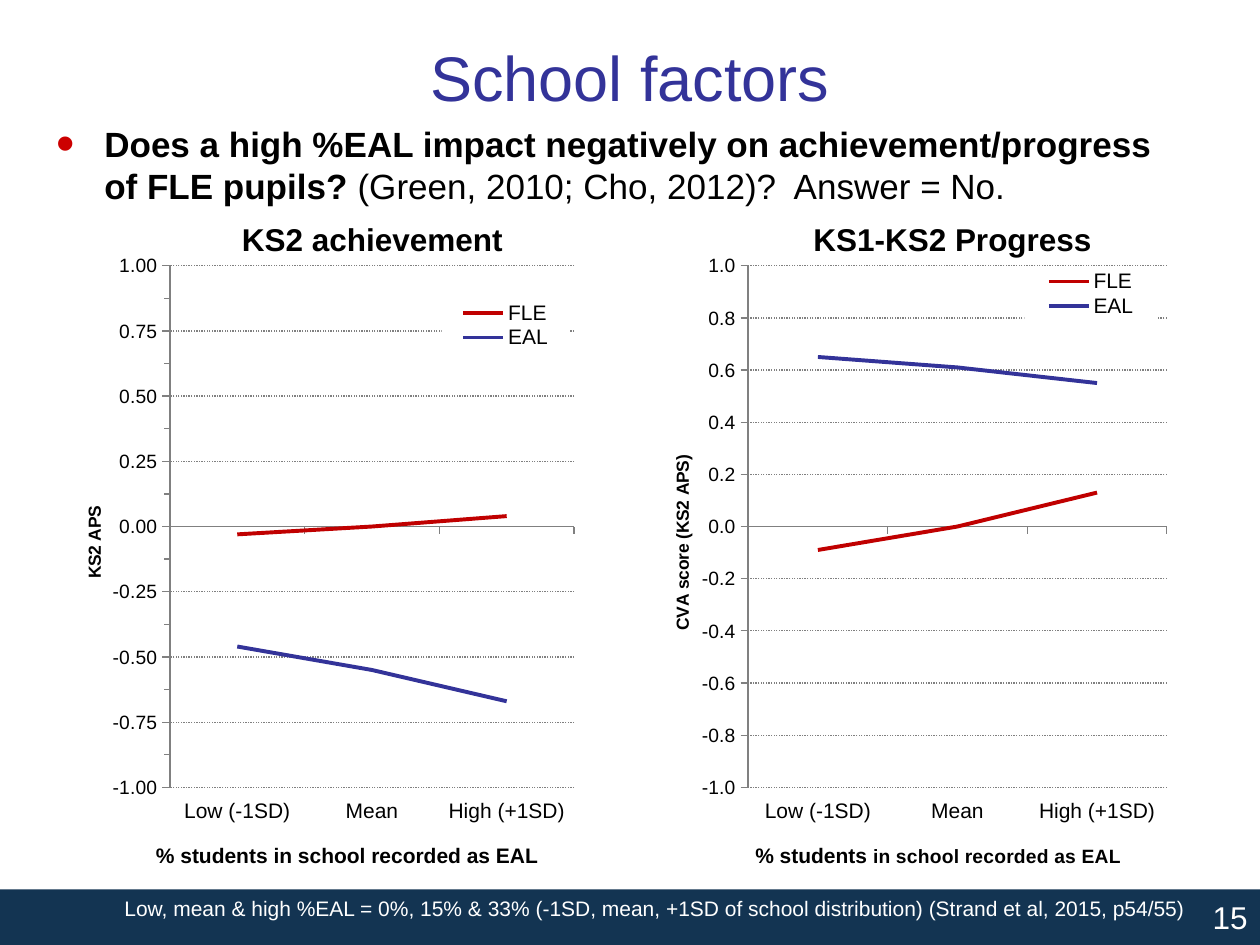
from dataclasses import dataclass

import lxml.etree
import pptx
import pptx.chart.data
import pptx.dml.color
import pptx.enum.chart
import pptx.enum.dml
import pptx.enum.shapes
import pptx.enum.text
import pptx.oxml.ns
import pptx.util

Inches = pptx.util.Inches
Pt = pptx.util.Pt
qn = pptx.oxml.ns.qn
Align = pptx.enum.text.PP_ALIGN
Anchor = pptx.enum.text.MSO_ANCHOR
Tick = pptx.enum.chart.XL_TICK_MARK


@dataclass(frozen=True)
class Theme:
    font: str = "Arial"
    black: str = "000000"
    white: str = "FFFFFF"
    grey: str = "808080"
    navy: str = "133452"
    title: str = "333399"
    bullet: str = "CC0000"
    fle: str = "C00000"
    eal: str = "333399"
    title_size: int = 36
    body_size: int = 20
    heading_size: int = 18
    label_size: int = 12
    scale_size: int = 11
    axis_size: int = 10


THEME = Theme()


@dataclass(frozen=True)
class Run:
    text: str
    size: float
    bold: bool = False


@dataclass(frozen=True)
class Panel:
    """One line chart; layouts are fractions of the chart's own frame."""
    heading: str
    heading_box: tuple
    left: float
    fle: tuple
    eal: tuple
    scale_title: str
    scale_title_at: tuple
    category_title: list
    category_title_at: tuple
    number_format: str
    step: float
    minor_ticks: bool
    plot: tuple
    legend: tuple


def rgb(value: str) -> pptx.dml.color.RGBColor:
    return pptx.dml.color.RGBColor.from_string(value)


def write(frame, runs: list, *, color: str = THEME.black, align=Align.LEFT,
          anchor=Anchor.TOP, bullet: bool = False) -> None:
    """Fill a text frame with one formatted paragraph."""
    frame.word_wrap = True
    frame.vertical_anchor = anchor
    paragraph = frame.paragraphs[0]
    paragraph.alignment = align
    if bullet:
        add_bullet(paragraph)
    add_runs(paragraph, runs, color)


def add_runs(paragraph, runs: list, color: str) -> None:
    for part in runs:
        run = paragraph.add_run()
        run.text = part.text
        style(run.font, part.size, color, part.bold)


def style(font, size: float, color: str = THEME.black, bold: bool = False) -> None:
    font.name, font.size, font.bold = THEME.font, Pt(size), bold
    font.color.rgb = rgb(color)


def add_bullet(paragraph) -> None:
    props = paragraph._p.get_or_add_pPr()
    props.set("marL", str(Inches(0.38)))
    props.set("indent", str(-Inches(0.38)))
    color = lxml.etree.SubElement(props, qn("a:buClr"))
    lxml.etree.SubElement(color, qn("a:srgbClr"), val=THEME.bullet)
    lxml.etree.SubElement(props, qn("a:buSzPct"), val="150000")
    lxml.etree.SubElement(props, qn("a:buFont"), typeface=THEME.font)
    lxml.etree.SubElement(props, qn("a:buChar"), char="•")


def add_text(slide, box: tuple, runs: list, **text_format) -> None:
    write(slide.shapes.add_textbox(*map(Inches, box)).text_frame, runs, **text_format)


def place(parent, after: str, inner: bool = False, **fractions: float) -> None:
    """Give a chart part a manual layout, following the named child if any."""
    for old in parent.findall(qn("c:layout")):
        parent.remove(old)
    layout = lxml.etree.Element(qn("c:layout"))
    manual = lxml.etree.SubElement(layout, qn("c:manualLayout"))
    if inner:
        lxml.etree.SubElement(manual, qn("c:layoutTarget"), val="inner")
    for key in ("x", "y"):
        lxml.etree.SubElement(manual, qn(f"c:{key}Mode"), val="edge")
    for key, value in fractions.items():
        lxml.etree.SubElement(manual, qn(f"c:{key}"), val=str(value))
    previous = parent.find(qn(after)) if after else None
    parent.insert(0 if previous is None else parent.index(previous) + 1, layout)


def title_axis(axis, runs: list, at: tuple, upright: bool = False) -> None:
    frame = axis.axis_title.text_frame
    add_runs(frame.paragraphs[0], runs, THEME.black)
    if upright:
        frame._txBody.bodyPr.set("rot", "-5400000")
        frame._txBody.bodyPr.set("vert", "horz")
    place(axis.axis_title._element, "c:tx", x=at[0], y=at[1])


def draw_line(line, color: str, width: float) -> None:
    line.color.rgb = rgb(color)
    line.width = Pt(width)


def add_panel(slide, panel: Panel) -> None:
    data = pptx.chart.data.CategoryChartData()
    data.categories = ["Low (-1SD)", "Mean", "High (+1SD)"]
    data.add_series("FLE", panel.fle)
    data.add_series("EAL", panel.eal)
    frame = (panel.left, 2.02, 4.42, 5.04)
    chart = slide.shapes.add_chart(pptx.enum.chart.XL_CHART_TYPE.LINE,
                                   *map(Inches, frame), data).chart
    chart.has_title = False
    style(chart.font, THEME.axis_size)
    chart.plots[0].vary_by_categories = False
    for series, color in zip(chart.plots[0].series, (THEME.fle, THEME.eal)):
        series.smooth = False
        draw_line(series.format.line, color, 2.25)

    # Axes
    scale, categories = chart.value_axis, chart.category_axis
    scale.minimum_scale, scale.maximum_scale = -1, 1
    scale.major_unit = panel.step
    scale.minor_unit = panel.step / 2
    scale.minor_tick_mark = Tick.OUTSIDE if panel.minor_ticks else Tick.NONE
    scale.tick_labels.number_format = panel.number_format
    scale.tick_labels.number_format_is_linked = False
    scale.has_major_gridlines = True
    grid = scale.major_gridlines.format.line
    draw_line(grid, THEME.grey, 0.75)
    grid.dash_style = pptx.enum.dml.MSO_LINE.ROUND_DOT
    categories.tick_label_position = pptx.enum.chart.XL_TICK_LABEL_POSITION.LOW
    for axis, size in ((scale, THEME.scale_size), (categories, THEME.label_size)):
        axis.major_tick_mark = Tick.OUTSIDE
        draw_line(axis.format.line, THEME.grey, 0.75)
        style(axis.tick_labels.font, size)
    title_axis(scale, [Run(panel.scale_title, THEME.axis_size, True)],
               panel.scale_title_at, upright=True)
    title_axis(categories, panel.category_title, panel.category_title_at)

    # Legend and plot area
    chart.has_legend = True
    legend = chart.legend
    legend.position = pptx.enum.chart.XL_LEGEND_POSITION.RIGHT
    legend.include_in_layout = False
    style(legend.font, THEME.label_size)
    backing = lxml.etree.Element(qn("c:spPr"))
    fill = lxml.etree.SubElement(backing, qn("a:solidFill"))
    lxml.etree.SubElement(fill, qn("a:srgbClr"), val=THEME.white)
    legend._element.find(qn("c:txPr")).addprevious(backing)
    place(legend._element, "c:legendPos", **dict(zip("xywh", panel.legend)))
    place(chart._chartSpace.chart.plotArea, "", inner=True,
          **dict(zip("xywh", panel.plot)))

    add_text(slide, panel.heading_box, [Run(panel.heading, THEME.heading_size, True)],
             align=Align.CENTER)


PANELS = [
    Panel("KS2 achievement", (1.38, 1.7, 3.15, 0.4), 0.5,
          (-0.03, 0, 0.04), (-0.46, -0.55, -0.67), "KS2 APS", (0.03, 0.39),
          [Run("% students in school recorded as EAL", THEME.label_size, True)],
          (0.16, 0.92), "0.00", 0.25, True,
          (0.192, 0.016, 0.726, 0.823), (0.68, 0.07, 0.23, 0.08)),
    Panel("KS1-KS2 Progress", (5.71, 1.7, 3.7, 0.4), 5.08,
          (-0.09, 0, 0.13), (0.65, 0.61, 0.55), "CVA score (KS2 APS)", (0.05, 0.31),
          [Run("% students ", THEME.label_size, True),
           Run("in school recorded as EAL", THEME.scale_size, True)],
          (0.2, 0.92), "0.0", 0.2, False,
          (0.194, 0.016, 0.752, 0.823), (0.69, 0.02, 0.24, 0.08)),
]


def main() -> None:
    deck = pptx.Presentation()
    deck.slide_width, deck.slide_height = Inches(10), Inches(7.5)
    slide = deck.slides.add_slide(deck.slide_layouts[6])

    # Footer band with page number
    band = slide.shapes.add_shape(pptx.enum.shapes.MSO_SHAPE.RECTANGLE,
                                  *map(Inches, (0, 7.06, 10, 0.44)))
    band.shadow.inherit = False
    band.fill.solid()
    band.fill.fore_color.rgb = rgb(THEME.navy)
    band.line.fill.background()
    write(band.text_frame, [Run("15", THEME.heading_size)], color=THEME.white,
          align=Align.RIGHT, anchor=Anchor.MIDDLE)

    # Title and question
    add_text(slide, (0.5, 0.3, 9, 0.61), [Run("School factors", THEME.title_size)],
             color=THEME.title, align=Align.CENTER, anchor=Anchor.MIDDLE)
    add_text(slide, (0.35, 0.92, 9.16, 0.79),
             [Run("Does a high %EAL impact negatively on achievement/progress "
                  "of FLE pupils? ", THEME.body_size, True),
              Run("(Green, 2010; Cho, 2012)?  Answer = No.", THEME.body_size)],
             bullet=True)

    # Charts
    for panel in PANELS:
        add_panel(slide, panel)

    # Source note
    add_text(slide, (0.51, 7.06, 9, 0.3),
             [Run("Low, mean & high %EAL = 0%, 15% & 33% (-1SD, mean, +1SD of school "
                  "distribution) (Strand et al, 2015, p54/55)", THEME.label_size)],
             color=THEME.white, align=Align.RIGHT)

    deck.save("out.pptx")


if __name__ == "__main__":
    main()
